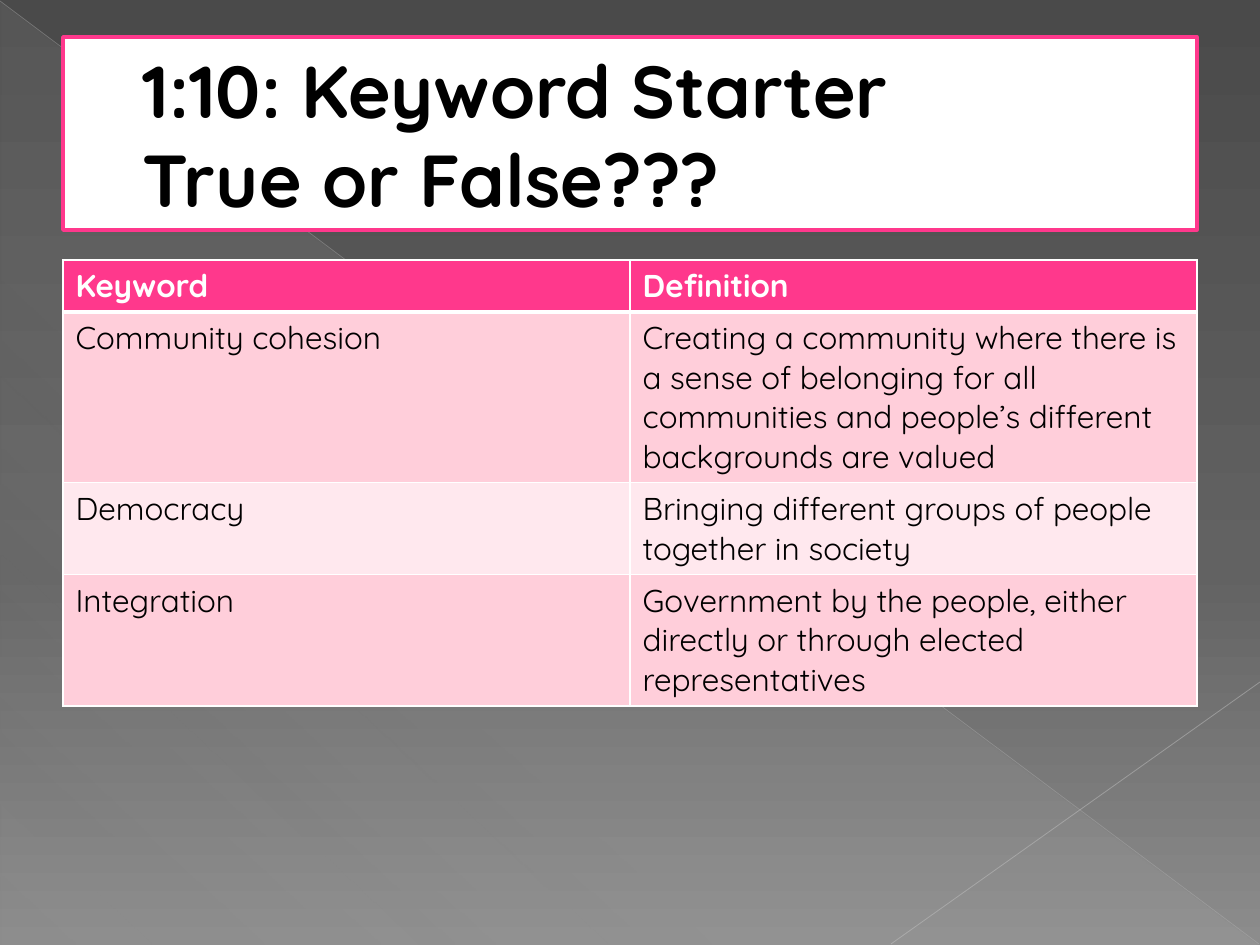
import pptx
import pptx.util
import pptx.dml.color
import pptx.enum.shapes
import pptx.enum.text
import pptx.oxml
import pptx.oxml.ns
import lxml.etree

RGB = pptx.dml.color.RGBColor
SHAPES = pptx.enum.shapes.MSO_SHAPE
qn = pptx.oxml.ns.qn

EMU_PER_PX = 914400 / 126
FONT = "Quicksand"
WHITE = RGB(0xFF, 0xFF, 0xFF)
BLACK = RGB(0, 0, 0)
PINK = RGB(0xFF, 0x38, 0x8C)
PINK_MID = RGB(0xFF, 0xCE, 0xDA)
PINK_PALE = RGB(0xFF, 0xE8, 0xEE)
GREY_DARK = RGB(0x4A, 0x4A, 0x4A)
GREY_MID = RGB(0x62, 0x62, 0x62)
GREY_LIGHT = RGB(0x8C, 0x8C, 0x8C)
SHEEN = RGB(0xD2, 0xD2, 0xD2)
RAY_FALLING = RGB(0xBF, 0xBF, 0xBF)
RAY_RISING = RGB(0xC6, 0xC6, 0xC6)

TITLE_LINES = ["1:10: Keyword Starter", "True or False???"]
KEYWORDS = [
    ("Keyword", "Definition"),
    ("Community cohesion",
     "Creating a community where there is a sense of belonging for all "
     "communities and people’s different backgrounds are valued"),
    ("Democracy", "Bringing different groups of people together in society"),
    ("Integration",
     "Government by the people, either directly or through elected representatives"),
]
ROW_HEIGHTS = [52, 170, 92, 131]
ROW_FILLS = [PINK, PINK_MID, PINK_PALE, PINK_MID]


def px(*lengths):
    return [pptx.util.Emu(round(length * EMU_PER_PX)) for length in lengths]


def add_color(parent, color, opacity=100):
    solid = lxml.etree.SubElement(parent, qn("a:srgbClr"), val=str(color))
    if opacity < 100:
        lxml.etree.SubElement(solid, qn("a:alpha"), val=str(opacity * 1000))


def set_gradient(fill, owner, stops, angle):
    fill.gradient()
    gradient = owner.find(".//" + qn("a:gradFill"))
    for child in list(gradient):
        gradient.remove(child)
    stop_list = lxml.etree.SubElement(gradient, qn("a:gsLst"))
    for position, color, opacity in stops:
        stop = lxml.etree.SubElement(stop_list, qn("a:gs"), pos=str(position * 1000))
        add_color(stop, color, opacity)
    lxml.etree.SubElement(gradient, qn("a:lin"), ang=str(angle * 60000), scaled="0")


def add_run(paragraph, text, size, color, bold):
    run = paragraph.add_run()
    run.text = text
    run.font.name = FONT
    run.font.size = pptx.util.Pt(size)
    run.font.color.rgb = color
    run.font.bold = bold


def add_sheen(slide):
    sheen = slide.shapes.add_shape(SHAPES.RIGHT_TRIANGLE, *px(1, 2, 1258, 943))
    sheen.shadow.inherit = False
    sheen.line.fill.background()
    stops = [(0, SHEEN, 10), (70, SHEEN, 8), (100, SHEEN, 1)]
    set_gradient(sheen.fill, sheen.element, stops, 133)


def add_ray(slide, ends, color, width, opacity):
    ray = slide.shapes.add_connector(pptx.enum.shapes.MSO_CONNECTOR.STRAIGHT, *px(*ends))
    ray.line.width = pptx.util.Pt(width)
    ray.line.color.rgb = color
    solid = ray.element.find(".//" + qn("a:srgbClr"))
    lxml.etree.SubElement(solid, qn("a:alpha"), val=str(opacity * 1000))
    lxml.etree.SubElement(ray.element.spPr, qn("a:effectLst"))


def add_title(slide):
    title = slide.shapes.add_shape(SHAPES.RECTANGLE, *px(63, 37, 1134, 193))
    title.shadow.inherit = False
    title.fill.solid()
    title.fill.fore_color.rgb = WHITE
    title.line.color.rgb = PINK
    title.line.width = pptx.util.Pt(2)
    frame = title.text_frame
    frame.word_wrap = True
    frame.vertical_anchor = pptx.enum.text.MSO_ANCHOR.MIDDLE
    heading = frame.paragraphs[0]
    heading.alignment = pptx.enum.text.PP_ALIGN.LEFT
    indent, = px(67)
    heading._p.get_or_add_pPr().set("marL", str(indent))
    for number, line in enumerate(TITLE_LINES):
        if number:
            heading.add_line_break()
        add_run(heading, line, 42, BLACK, True)


def set_borders(cell, row):
    properties = cell._tc.get_or_add_tcPr()
    widths = {"L": 1, "R": 1, "T": 3 if row == 1 else 1, "B": 3 if row == 0 else 1}
    for position, (side, width) in enumerate(widths.items()):
        border = lxml.etree.Element(qn("a:ln" + side), w=str(pptx.util.Pt(width)))
        add_color(lxml.etree.SubElement(border, qn("a:solidFill")), WHITE)
        properties.insert(position, border)


def add_keyword_table(slide):
    frame = slide.shapes.add_table(
        len(KEYWORDS), 2, *px(63, 260, 1134, sum(ROW_HEIGHTS)))
    table = frame.table
    table.horz_banding = False
    for row, (texts, height, fill) in enumerate(zip(KEYWORDS, ROW_HEIGHTS, ROW_FILLS)):
        table.rows[row].height, = px(height)
        for column, text in enumerate(texts):
            cell = table.cell(row, column)
            cell.fill.solid()
            cell.fill.fore_color.rgb = fill
            set_borders(cell, row)
            is_header = row == 0
            add_run(cell.text_frame.paragraphs[0], text, 18,
                    WHITE if is_header else BLACK, is_header)


def main():
    deck = pptx.Presentation()
    deck.slide_width, deck.slide_height = px(1260, 945)
    slide = deck.slides.add_slide(deck.slide_layouts[6])
    stops = [(0, GREY_DARK, 100), (60, GREY_MID, 100), (100, GREY_LIGHT, 100)]
    set_gradient(slide.background.fill, slide.element, stops, 90)
    add_sheen(slide)
    add_ray(slide, (0, 1, 1259, 944), RAY_FALLING, 0.39, 35)
    add_ray(slide, (1260, 682, 891, 944), RAY_RISING, 0.47, 45)
    add_title(slide)
    add_keyword_table(slide)
    deck.save("out.pptx")


if __name__ == "__main__":
    main()
